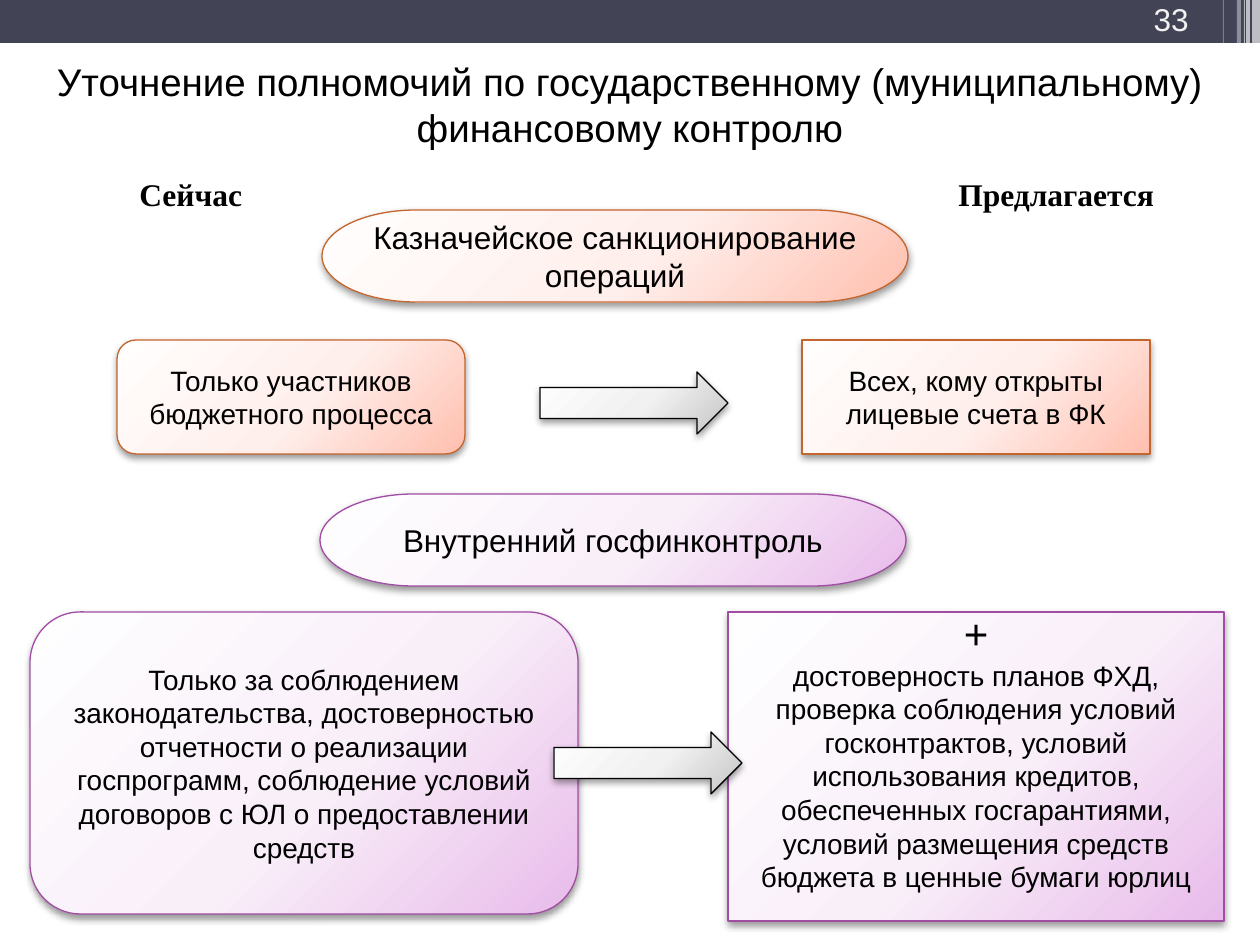
from dataclasses import dataclass, field

from pptx import Presentation
from pptx.dml.color import RGBColor
from pptx.enum.shapes import MSO_SHAPE
from pptx.enum.text import MSO_ANCHOR, MSO_AUTO_SIZE, PP_ALIGN
from pptx.oxml import parse_xml
from pptx.oxml.ns import qn
from pptx.util import Emu, Pt

RECT = MSO_SHAPE.RECTANGLE
ROUND = MSO_SHAPE.ROUNDED_RECTANGLE
PILL = MSO_SHAPE.FLOWCHART_TERMINATOR
ARROW = MSO_SHAPE.RIGHT_ARROW
MIDDLE = MSO_ANCHOR.MIDDLE
TOP = MSO_ANCHOR.TOP
BOTTOM = MSO_ANCHOR.BOTTOM
LEFT = PP_ALIGN.LEFT
CENTER = PP_ALIGN.CENTER
RIGHT = PP_ALIGN.RIGHT
NO_FIT = MSO_AUTO_SIZE.NONE

SCALE = 914400 / 126
SPACE = 'xmlns:a="http://schemas.openxmlformats.org/drawingml/2006/main"'

Spot = tuple[int, int, int, int]


@dataclass
class Tone:
    line: str
    stops: tuple[str, str, str]


@dataclass
class Card:
    kind: int
    spot: Spot
    tone: Tone
    lines: list[tuple[str, int]] = field(default_factory=list)
    frame: dict = field(default_factory=dict)


@dataclass
class Stripe:
    left: int
    width: int
    height: int
    alpha: int


@dataclass
class Label:
    text: str
    spot: Spot
    font: dict
    frame: dict
    align: int


def px(size: int) -> Emu:
    return Emu(round(size * SCALE))


def place(spot: Spot) -> list[Emu]:
    return [px(part) for part in spot]


def shade(code: str) -> RGBColor:
    return RGBColor.from_string(code)


def apply(target, values: dict) -> None:
    for name, value in values.items():
        setattr(target, name, value)


def write(frame, lines: list[tuple[str, dict]], align: int, code: str, form: dict) -> None:
    apply(frame, form)
    for num, (text, font) in enumerate(lines):
        para = frame.add_paragraph() if num else frame.paragraphs[0]
        para.alignment = align
        run = para.add_run()
        run.text = text
        apply(run.font, font)
        run.font.color.rgb = shade(code)


def blend(shape, tone: Tone) -> None:
    stops = "".join(
        f'<a:gs pos="{pos}000"><a:srgbClr val="{code}"/></a:gs>'
        for pos, code in zip((0, 55, 100), tone.stops)
    )
    props = shape._element.spPr
    props.find(qn("a:prstGeom")).addnext(parse_xml(
        f'<a:gradFill {SPACE} rotWithShape="1"><a:gsLst>{stops}</a:gsLst>'
        '<a:path path="circle"><a:fillToRect l="-40000" t="-90000" '
        'r="140000" b="190000"/></a:path></a:gradFill>'
    ))
    props.append(parse_xml(
        f'<a:effectLst {SPACE}><a:outerShdw blurRad="{Pt(4.1)}" dist="{Pt(2)}" '
        'dir="5400000" rotWithShape="0"><a:srgbClr val="000000">'
        '<a:alpha val="40000"/></a:srgbClr></a:outerShdw></a:effectLst>'
    ))


def add_bar(slide, spot: Spot, code: str):
    bar = slide.shapes.add_shape(RECT, *place(spot))
    bar.shadow.inherit = False
    bar.fill.solid()
    bar.fill.fore_color.rgb = shade(code)
    bar.line.fill.background()
    return bar


def add_stripe(slide, stripe: Stripe) -> None:
    bar = add_bar(slide, (stripe.left, 0, stripe.width, stripe.height), "FFFFFF")
    tint = bar._element.spPr.find(qn("a:solidFill"))[0]
    tint.append(parse_xml(f'<a:alpha {SPACE} val="{stripe.alpha}000"/>'))


def add_card(slide, card: Card) -> None:
    shape = slide.shapes.add_shape(card.kind, *place(card.spot))
    shape.line.color.rgb = shade(card.tone.line)
    shape.line.width = Pt(0.75)
    blend(shape, card.tone)
    lines = [(text, {"name": "Arial", "size": Pt(size)}) for text, size in card.lines]
    form = {"word_wrap": True, "vertical_anchor": MIDDLE} | card.frame
    write(shape.text_frame, lines, CENTER, "000000", form)


def add_label(slide, label: Label, code: str) -> None:
    box = slide.shapes.add_textbox(*place(label.spot))
    write(box.text_frame, [(label.text, label.font)], label.align, code, label.frame)


CORAL = Tone("C4652D", ("FFFEFD", "FFEFEC", "FFBFAE"))
PLUM = Tone("A04DA3", ("FEFEFF", "F9EFF9", "E8BBEA"))
GRAY = Tone("000000", ("FEFEFE", "F1F1F1", "C5C5C5"))

STRIPES = [
    Stripe(1252, 8, 86, 65),
    Stripe(1246, 4, 86, 65),
    Stripe(1244, 1, 86, 60),
    Stripe(1237, 4, 86, 40),
    Stripe(1223, 1, 81, 30),
]

HEAD = {"name": "Times New Roman", "size": Pt(18), "bold": True}
FREE = {"word_wrap": False, "vertical_anchor": TOP}
LABELS = [
    Label("Сейчас", (127, 169, 130, 50), HEAD, FREE, LEFT),
    Label("Предлагается", (946, 169, 223, 50), HEAD, FREE, LEFT),
]
PAGE = Label("33", (1101, 3, 100, 41), {"name": "Arial", "size": Pt(18)},
             {"word_wrap": True, "vertical_anchor": BOTTOM}, RIGHT)

CARDS = [
    Card(PILL, (322, 210, 586, 92), CORAL,
         [("Казначейское санкционирование операций", 18)]),
    Card(ROUND, (117, 340, 348, 114), CORAL,
         [("Только участников бюджетного процесса", 16)]),
    Card(RECT, (802, 340, 348, 114), CORAL,
         [("Всех, кому открыты лицевые счета в ФК", 16)]),
    Card(PILL, (320, 494, 586, 92), PLUM, [("Внутренний госфинконтроль", 18)]),
    Card(ROUND, (30, 612, 548, 302), PLUM,
         [("Только за соблюдением законодательства, достоверностью отчетности "
           "о реализации госпрограмм, соблюдение условий договоров с ЮЛ "
           "о предоставлении средств", 16)]),
    Card(RECT, (728, 612, 496, 309), PLUM,
         [("+", 24),
          ("достоверность планов ФХД, проверка соблюдения условий госконтрактов, "
           "условий использования кредитов, обеспеченных госгарантиями, условий "
           "размещения средств бюджета в ценные бумаги юрлиц", 16)],
         {"margin_top": 0, "margin_bottom": px(32)}),
    Card(ARROW, (540, 372, 188, 62), GRAY),
    Card(ARROW, (554, 732, 188, 62), GRAY),
]


def main() -> None:
    deck = Presentation()
    apply(deck, {"slide_width": px(1260), "slide_height": px(945)})
    slide = deck.slides.add_slide(deck.slide_layouts[5])
    title = slide.shapes.title
    apply(title, dict(zip(("left", "top", "width", "height"), place((30, 64, 1200, 80)))))
    write(title.text_frame,
          [("Уточнение полномочий по государственному (муниципальному) "
            "финансовому контролю", {"name": "Arial", "size": Pt(22)})],
          CENTER, "000000",
          {"word_wrap": True, "vertical_anchor": MIDDLE, "auto_size": NO_FIT})
    add_bar(slide, (0, 0, 1260, 43), "424456")
    for stripe in STRIPES:
        add_stripe(slide, stripe)
    add_label(slide, PAGE, "F2F2F2")
    for label in LABELS:
        add_label(slide, label, "000000")
    for card in CARDS:
        add_card(slide, card)
    deck.save("out.pptx")


if __name__ == "__main__":
    main()
